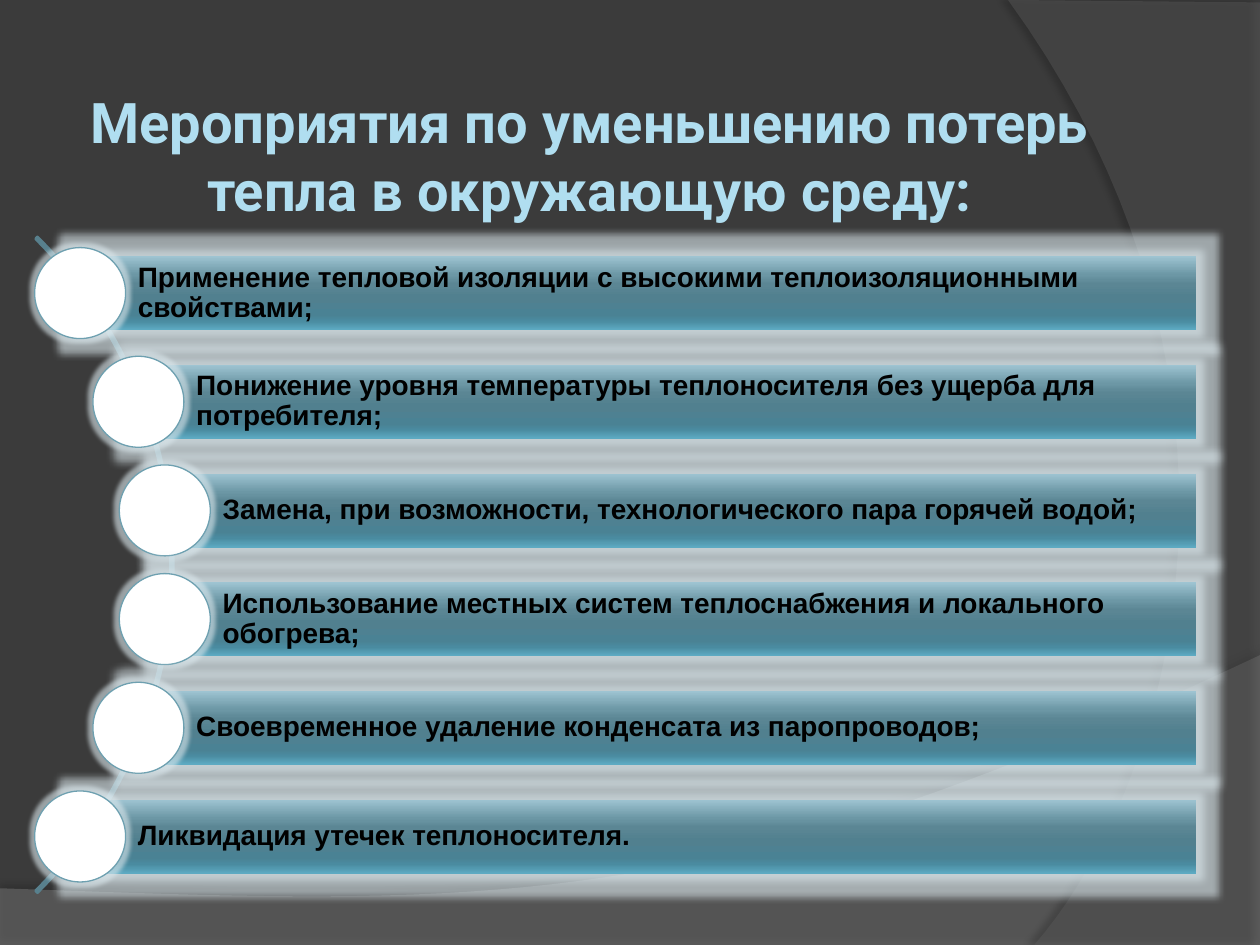
from math import sqrt

from pptx import Presentation
from pptx.dml.color import RGBColor
from pptx.enum.shapes import MSO_SHAPE as Preset
from pptx.enum.text import MSO_ANCHOR as Anchor, PP_ALIGN as Align
from pptx.oxml import parse_xml
from pptx.oxml.ns import nsdecls, qn
from pptx.util import Pt

MEASURES = [
    "Применение тепловой изоляции с высокими теплоизоляционными свойствами;",
    "Понижение уровня температуры теплоносителя без ущерба для потребителя;",
    "Замена, при возможности, технологического пара горячей водой;",
    "Использование местных систем теплоснабжения и локального обогрева;",
    "Своевременное удаление конденсата из паропроводов;",
    "Ликвидация утечек теплоносителя.",
]
BAR_STOPS = [(0, "9EC4D2"), (25, "6C97A5"), (38, "5B8694"), (55, "51808F"),
             (80, "4A8294"), (88, "4A8BA0"), (100, "5DAAC2")]


def color(value):
    return RGBColor.from_string(value)


def color_xml(value, opacity=100):
    return f'<a:srgbClr val="{value}"><a:alpha val="{opacity * 1000}"/></a:srgbClr>'


def paint(shape, fill=None, line=None, width=0.75):
    shape.shadow.inherit = False
    if fill:
        shape.fill.solid()
        shape.fill.fore_color.rgb = color(fill)
    else:
        shape.fill.background()
    if line:
        shape.line.color.rgb = color(line)
        shape.line.width = Pt(width)
    else:
        shape.line.fill.background()


def add_effect(shape, tag, attributes, value, opacity):
    effects = shape._element.spPr.find(qn("a:effectLst"))
    effects.append(parse_xml(
        f'<a:{tag} {nsdecls("a")} {attributes}>{color_xml(value, opacity)}</a:{tag}>'))


def add_glow(shape, radius, value, opacity):
    add_effect(shape, "glow", f'rad="{Pt(radius)}"', value, opacity)


def fill_gradient(shape, stops):
    shape.fill.gradient()
    shape.fill.gradient_angle = 270
    stop_list = shape._element.spPr.find(".//" + qn("a:gsLst"))
    for stop in list(stop_list):
        stop_list.remove(stop)
    for position, value in stops:
        stop_list.append(parse_xml(
            f'<a:gs {nsdecls("a")} pos="{position * 1000}">{color_xml(value)}</a:gs>'))


def bezier(start, first, second, end, steps=40):
    for step in range(steps + 1):
        t = step / steps
        weights = ((1 - t) ** 3, 3 * t * (1 - t) ** 2, 3 * t * t * (1 - t), t ** 3)
        yield tuple(sum(w * point[axis] for w, point in zip(weights, (start, first, second, end)))
                    for axis in (0, 1))


def add_wave(page, corners, curve, fill, opacity, shadow_opacity, distance, angle):
    points = [(Pt(x), Pt(y)) for x, y in [*corners, *bezier(*curve)]]
    builder = page.shapes.build_freeform(*points[0])
    builder.add_line_segments(points[1:], close=True)
    wave = builder.convert_to_shape()
    paint(wave, fill)
    solid = wave._element.spPr.find(qn("a:solidFill"))
    solid[0].append(parse_xml(f'<a:alpha {nsdecls("a")} val="{opacity * 1000}"/>'))
    add_effect(wave, "outerShdw",
               f'blurRad="{Pt(4)}" dist="{Pt(distance)}" dir="{angle * 60000}"',
               "000000", shadow_opacity)


def add_backdrop(page, width, height):
    page.background.fill.solid()
    page.background.fill.fore_color.rgb = color("3B3B3B")
    add_wave(page, [(0, height), (width, height)],
             [(width, 374.4), (402.5, 524.9), (281.5, 517.7), (0, 507.6)],
             "7F7F7F", 45, 35, 3.5, 270)
    add_wave(page, [(width, 1.4), (width, height)],
             [(591, height), (673, 445.7), (733, 216), (576, 0)],
             "5E5E5E", 40, 45, 4, 180)


def add_title(page, left, top, width, height):
    title = page.shapes.title
    page.shapes._spTree.append(title._element)
    title.left, title.top, title.width, title.height = map(Pt, (left, top, width, height))
    frame = title.text_frame
    frame.text = "Мероприятия по уменьшению потерь тепла в окружающую среду:"
    frame.vertical_anchor = Anchor.MIDDLE
    frame.margin_left = frame.margin_right = frame.margin_top = frame.margin_bottom = Pt(3.6)
    para = frame.paragraphs[0]
    para.alignment = Align.CENTER
    para.font.name, para.font.size, para.font.bold = "Roboto", Pt(32), True
    para.font.color.rgb = color("B0DEF0")


def add_measure(page, text, center_x, center_y, right):
    bar_height, diameter = 42, 52
    bar = page.shapes.add_shape(Preset.RECTANGLE, Pt(center_x), Pt(center_y - bar_height / 2),
                                Pt(right - center_x), Pt(bar_height))
    paint(bar)
    fill_gradient(bar, BAR_STOPS)
    add_glow(bar, 9, "DCE9EE", 60)
    frame = bar.text_frame
    frame.word_wrap = True
    frame.vertical_anchor = Anchor.MIDDLE
    frame.margin_left = Pt(33)
    frame.margin_right = frame.margin_top = frame.margin_bottom = Pt(3)
    frame.text = text
    para = frame.paragraphs[0]
    para.alignment, para.line_spacing = Align.LEFT, 0.9
    para.font.name, para.font.size, para.font.bold = "Arial", Pt(16), True
    para.font.color.rgb = color("000000")

    circle = page.shapes.add_shape(Preset.OVAL, Pt(center_x - diameter / 2),
                                   Pt(center_y - diameter / 2), Pt(diameter), Pt(diameter))
    paint(circle, "FFFFFF", "6EA0B0")
    add_glow(circle, 5, "DCE9EE", 60)


def add_curved_list(page, measures, left, top, right, step):
    radius = 265
    middle = top + step * (len(measures) - 1) / 2
    first_reach = sqrt(radius ** 2 - (middle - top) ** 2)
    axis = left - first_reach
    arc = page.shapes.add_shape(Preset.BLOCK_ARC, Pt(axis + 3 - radius), Pt(middle - radius),
                                Pt(2 * radius), Pt(2 * radius))
    arc.adjustments[0], arc.adjustments[1], arc.adjustments[2] = 189, 27, 0.003
    paint(arc, line="58808D", width=1.5)
    for index, text in enumerate(measures):
        center_y = top + index * step
        center_x = axis + sqrt(radius ** 2 - (center_y - middle) ** 2)
        add_measure(page, text, center_x, center_y, right)


def main():
    deck = Presentation()
    deck.slide_width, deck.slide_height = Pt(720), Pt(540)
    page = deck.slides.add_slide(deck.slide_layouts[5])
    add_backdrop(page, 720, 540)
    add_title(page, 36, 21.6, 602, 134)
    add_curved_list(page, MEASURES, left=45.8, top=167.5, right=683.5, step=62.1)
    deck.save("out.pptx")


if __name__ == "__main__":
    main()
